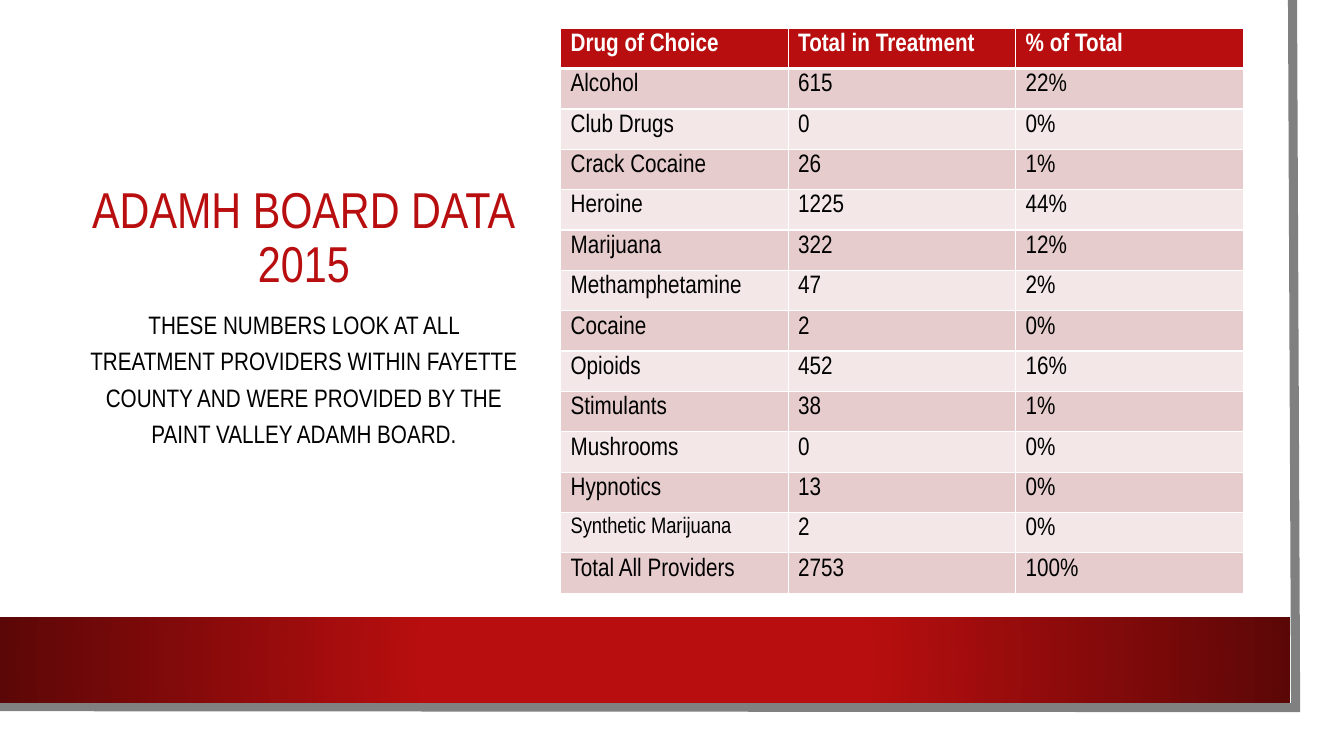
from pptx import Presentation
from pptx.dml.color import RGBColor as RGB
from pptx.enum.shapes import MSO_SHAPE as SHAPE
from pptx.enum.text import MSO_ANCHOR as ANCHOR, PP_ALIGN as ALIGN
from pptx.oxml import parse_xml
from pptx.oxml.ns import nsdecls
from pptx.util import Inches, Pt

THEME = {
    "font": "Arial Narrow",
    "red": "B80E0F", "dark": "5C0707", "grey": "808080",
    "white": "FFFFFF", "black": "000000",
    "bands": ["F3E7E7", "E6CCCC"],
    "title": 36, "text": 18, "small": 16, "frame": 6.5,
}
A = nsdecls("a")

prs = Presentation()
prs.slide_width, prs.slide_height = Inches(13.33), Inches(7.5)
s = prs.slides.add_slide(prs.slide_layouts[6])


def share(*percents):
    sides = (prs.slide_width, prs.slide_height) * 2
    return [round(side * pct / 100) for side, pct in zip(sides, percents)]


def style(p, size, color, bold=False):
    for r in p.runs:
        r.font.name, r.font.size, r.font.bold = THEME["font"], Pt(size), bold
        r.font.color.rgb = RGB.from_string(color)


builder = s.shapes.build_freeform(*share(96.17, 0))
builder.add_line_segments([share(96.4, 93.6), share(-0.23, 93.47)], close=False)
frame = builder.convert_to_shape()
frame.shadow.inherit = False
frame.fill.background()
frame.line.color.rgb = RGB.from_string(THEME["grey"])
frame.line.width = Pt(THEME["frame"])
frame.line._get_or_add_ln().append(parse_xml(f'<a:miter {A} lim="800000"/>'))

band = s.shapes.add_shape(SHAPE.RECTANGLE, *share(0, 81.65, 96.02, 11.33))
band.shadow.inherit = False
band.line.fill.background()
band.fill.gradient()
for stop, pos, color in zip(band.fill.gradient_stops, (0.34, 1), ("red", "dark")):
    stop.position = pos
    stop.color.rgb = RGB.from_string(THEME[color])
grad = band._element.spPr.find(".//{*}gradFill")
grad.replace(grad.find("{*}lin"), parse_xml(
    f'<a:path {A} path="circle">'
    '<a:fillToRect l="50000" t="50000" r="50000" b="50000"/></a:path>'))

TEXTS = [
    ("ADAMH BOARD DATA\v2015", 10, 29.47, ANCHOR.BOTTOM, 0.9, "title", "red"),
    ("THESE NUMBERS LOOK AT ALL TREATMENT PROVIDERS WITHIN FAYETTE COUNTY "
     "AND WERE PROVIDED BY THE PAINT VALLEY ADAMH BOARD.",
     39.47, 38.93, ANCHOR.TOP, 1.2, "text", "black"),
]
for text, top, height, anchor, spacing, size, color in TEXTS:
    tf = s.shapes.add_textbox(*share(5.7, top, 33.83, height)).text_frame
    tf.word_wrap = True
    tf.vertical_anchor = anchor
    p = tf.paragraphs[0]
    p.text = text
    p.alignment, p.line_spacing = ALIGN.CENTER, spacing
    style(p, THEME[size], THEME[color])

ROWS = [
    ("Drug of Choice", "Total in Treatment", "% of Total"),
    ("Alcohol", "615", "22%"),
    ("Club Drugs", "0", "0%"),
    ("Crack Cocaine", "26", "1%"),
    ("Heroine", "1225", "44%"),
    ("Marijuana", "322", "12%"),
    ("Methamphetamine", "47", "2%"),
    ("Cocaine", "2", "0%"),
    ("Opioids", "452", "16%"),
    ("Stimulants", "38", "1%"),
    ("Mushrooms", "0", "0%"),
    ("Hypnotics", "13", "0%"),
    ("Synthetic Marijuana", "2", "0%"),
    ("Total All Providers", "2753", "100%"),
]
table = s.shapes.add_table(len(ROWS), len(ROWS[0]),
                           *share(41.71, 3.73, 50.79, 5.09 * len(ROWS))).table
for i, row in enumerate(ROWS):
    head = i == 0
    for j, text in enumerate(row):
        cell = table.cell(i, j)
        cell.fill.solid()
        cell.fill.fore_color.rgb = RGB.from_string(
            THEME["red"] if head else THEME["bands"][i % 2])
        p = cell.text_frame.paragraphs[0]
        p.text = text
        size = THEME["small" if text == "Synthetic Marijuana" else "text"]
        style(p, size, THEME["white" if head else "black"], head)
        widths = {"L": 1, "R": 1, "T": 3 if i == 1 else 1, "B": 3 if head else 1}
        for k, (side, width) in enumerate(widths.items()):
            cell._tc.get_or_add_tcPr().insert(k, parse_xml(
                f'<a:ln{side} {A} w="{Pt(width)}"><a:solidFill>'
                f'<a:srgbClr val="{THEME["white"]}"/></a:solidFill></a:ln{side}>'))

prs.save("out.pptx")
